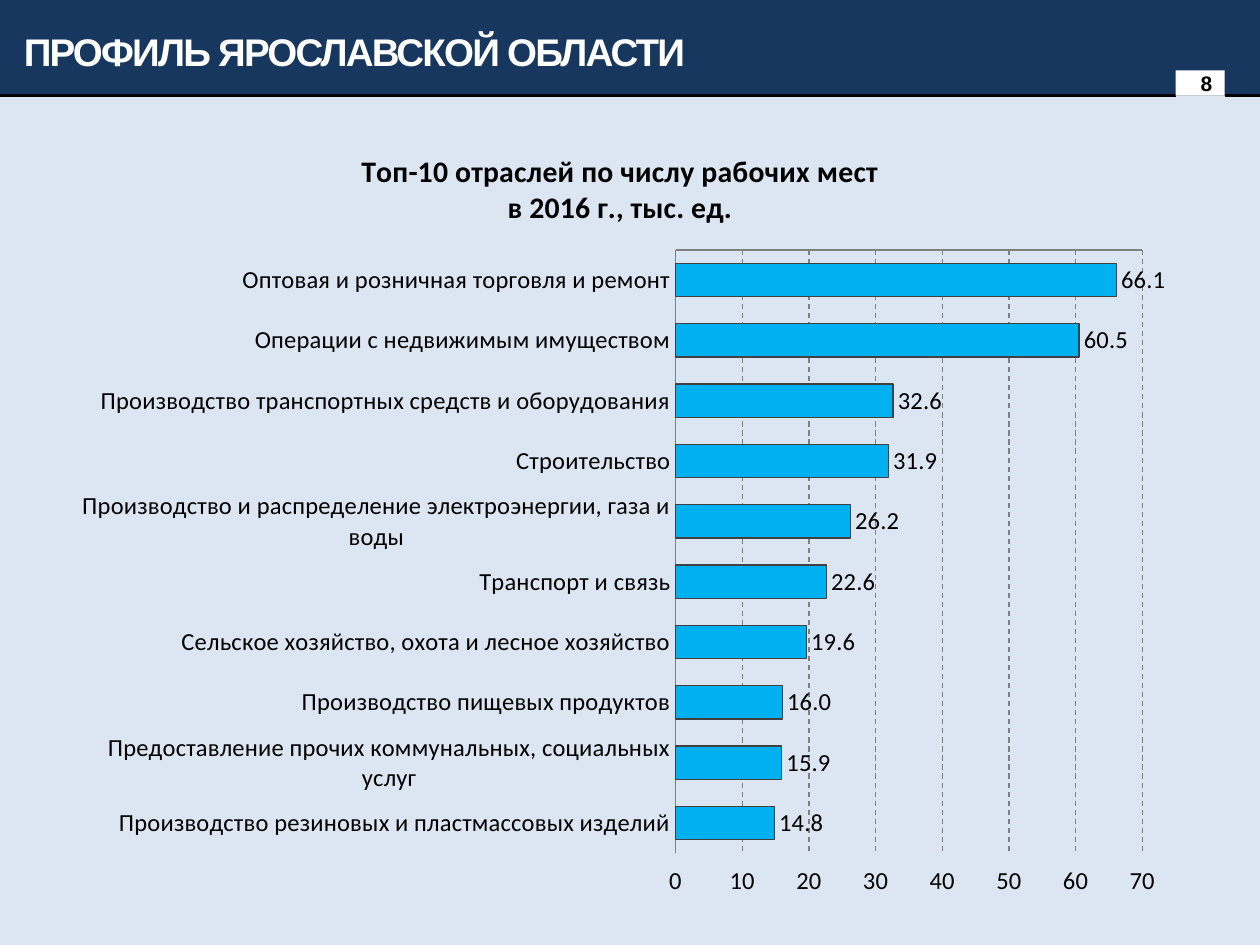
from lxml import etree
from pptx import Presentation
from pptx.chart.data import CategoryChartData
from pptx.dml.color import RGBColor
from pptx.enum.chart import XL_CHART_TYPE, XL_LABEL_POSITION, XL_TICK_LABEL_POSITION, XL_TICK_MARK
from pptx.enum.dml import MSO_LINE
from pptx.enum.shapes import MSO_CONNECTOR, MSO_SHAPE
from pptx.enum.text import MSO_ANCHOR, PP_ALIGN
from pptx.oxml import parse_xml
from pptx.oxml.ns import nsdecls, qn
from pptx.util import Cm, Pt

BACKGROUND = RGBColor(0xDC, 0xE6, 0xF2)
NAVY = RGBColor(0x17, 0x37, 0x5E)
WHITE = RGBColor(0xFF, 0xFF, 0xFF)
BLACK = RGBColor(0x00, 0x00, 0x00)
SKY = RGBColor(0x00, 0xB0, 0xF0)
DARK_GRAY = RGBColor(0x40, 0x40, 0x40)
GRAY = RGBColor(0x80, 0x80, 0x80)
RECTANGLE = MSO_SHAPE.RECTANGLE
STRAIGHT = MSO_CONNECTOR.STRAIGHT
MIDDLE = MSO_ANCHOR.MIDDLE
LEFT, RIGHT = PP_ALIGN.LEFT, PP_ALIGN.RIGHT
BAR_CLUSTERED = XL_CHART_TYPE.BAR_CLUSTERED
OUTSIDE_END = XL_LABEL_POSITION.OUTSIDE_END
LABELS_HIGH = XL_TICK_LABEL_POSITION.HIGH
NO_TICK = XL_TICK_MARK.NONE
DASH = MSO_LINE.DASH

HEADER_HEIGHT = 1.93
INDUSTRIES = {
    "Оптовая и розничная торговля и ремонт": 66.1,
    "Операции с недвижимым имуществом": 60.5,
    "Производство транспортных средств и оборудования": 32.6,
    "Строительство": 31.9,
    "Производство и распределение электроэнергии, газа и воды": 26.2,
    "Транспорт и связь": 22.6,
    "Сельское хозяйство, охота и лесное хозяйство": 19.6,
    "Производство пищевых продуктов": 16.0,
    "Предоставление прочих коммунальных, социальных услуг": 15.9,
    "Производство резиновых и пластмассовых изделий": 14.8,
}
PLOT_LAYOUT = {"x": 0.55, "y": 0.16, "w": 0.42, "h": 0.77}


def set_font(font, **values):
    font.color.rgb = values.pop("color")
    for name, value in values.items():
        setattr(font, name, value)


def add_box(left, top, width, height, fill, text, alignment, bottom_inset, font_values):
    shape = slide.shapes.add_shape(RECTANGLE, Cm(left), Cm(top), Cm(width), Cm(height))
    shape.shadow.inherit = False
    shape.fill.solid()
    shape.fill.fore_color.rgb = fill
    shape.line.fill.background()
    frame_values = {
        "word_wrap": True,
        "vertical_anchor": MIDDLE,
        "margin_left": Cm(0.25),
        "margin_right": Cm(0.25),
        "margin_top": Cm(0.13),
        "margin_bottom": Cm(bottom_inset),
    }
    for name, value in frame_values.items():
        setattr(shape.text_frame, name, value)
    paragraph = shape.text_frame.paragraphs[0]
    paragraph.alignment = alignment
    run = paragraph.add_run()
    run.text = text
    set_font(run.font, name="Arial", bold=True, **font_values)
    return paragraph


presentation = Presentation()
presentation.slide_width = Cm(25.4)
presentation.slide_height = Cm(19.05)
slide = presentation.slides.add_slide(presentation.slide_layouts[6])
slide.background.fill.solid()
slide.background.fill.fore_color.rgb = BACKGROUND

heading = add_box(0, 0, 25.4, HEADER_HEIGHT, NAVY, "ПРОФИЛЬ ЯРОСЛАВСКОЙ ОБЛАСТИ",
                  LEFT, 0, {"size": Pt(22), "color": WHITE})
heading._p.get_or_add_pPr().set("marL", str(Cm(0.23)))
heading.runs[0]._r.get_or_add_rPr().set("spc", "-100")

for start, end in [(0, 23.7), (24.69, 25.4)]:
    rule = slide.shapes.add_connector(STRAIGHT, Cm(start), Cm(HEADER_HEIGHT), Cm(end), Cm(HEADER_HEIGHT))
    rule.line.color.rgb = BLACK
    rule.line.width = Pt(1.5)
    etree.SubElement(rule._element.spPr, qn("a:effectLst"))

add_box(23.7, 1.42, 0.99, 0.51, WHITE, "8", RIGHT, 0.13, {"size": Pt(12), "color": BLACK})

chart_data = CategoryChartData(number_format="#,##0.0")
chart_data.categories = INDUSTRIES.keys()
chart_data.add_series("Рабочие места", INDUSTRIES.values())
chart = slide.shapes.add_chart(BAR_CLUSTERED, Cm(1.3), Cm(2.51), Cm(22.4), Cm(15.8), chart_data).chart
chart.has_legend = False
set_font(chart.font, name="Calibri", size=Pt(14), color=BLACK)

chart.has_title = True
chart.chart_title.include_in_layout = False
chart.chart_title.text_frame.text = "Топ-10 отраслей по числу рабочих мест\nв 2016 г., тыс. ед."
for paragraph in chart.chart_title.text_frame.paragraphs:
    set_font(paragraph.runs[0].font, name="Calibri", size=Pt(17), bold=True, color=BLACK)

plot = chart.plots[0]
plot.gap_width = 80
plot.vary_by_categories = False
plot.has_data_labels = True
label_values = {
    "show_value": True,
    "number_format": "#,##0.0",
    "number_format_is_linked": False,
    "position": OUTSIDE_END,
}
for name, value in label_values.items():
    setattr(plot.data_labels, name, value)
set_font(plot.data_labels.font, name="Calibri", size=Pt(14), color=BLACK)

series = plot.series[0]
series.format.fill.solid()
series.format.fill.fore_color.rgb = SKY
series.format.line.color.rgb = DARK_GRAY
series.format.line.width = Pt(0.75)

for axis in (chart.category_axis, chart.value_axis):
    axis.major_tick_mark = NO_TICK
    axis.minor_tick_mark = NO_TICK
    axis.format.line.color.rgb = GRAY
    axis.format.line.width = Pt(0.75)
chart.category_axis.reverse_order = True

value_axis = chart.value_axis
value_axis.minimum_scale = 0
value_axis.maximum_scale = 70
value_axis.major_unit = 10
value_axis.tick_label_position = LABELS_HIGH
value_axis.tick_labels.number_format = "#,##0"
value_axis.tick_labels.number_format_is_linked = False
gridline = value_axis.major_gridlines.format.line
gridline.color.rgb = GRAY
gridline.width = Pt(0.75)
gridline.dash_style = DASH

plot_area = chart._chartSpace.chart.plotArea
for layout in plot_area.findall(qn("c:layout")):
    plot_area.remove(layout)
modes = "".join(f'<c:{key}Mode val="edge"/>' for key in "xy")
sizes = "".join(f'<c:{key} val="{value}"/>' for key, value in PLOT_LAYOUT.items())
plot_area.insert(0, parse_xml(
    f'<c:layout {nsdecls("c")}><c:manualLayout><c:layoutTarget val="inner"/>'
    f"{modes}{sizes}</c:manualLayout></c:layout>"))

presentation.save("out.pptx")
